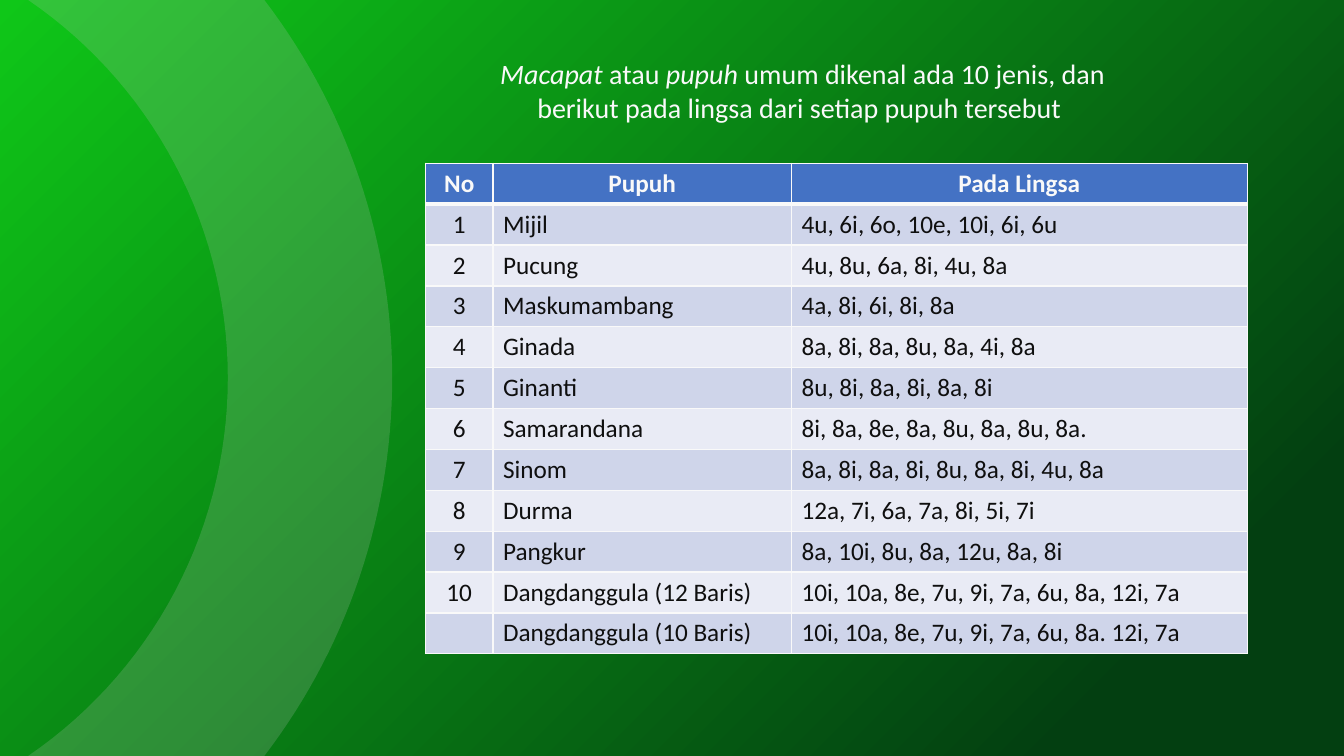
import math

from lxml import etree
from pptx import Presentation
from pptx.dml.color import RGBColor
from pptx.enum.shapes import MSO_SHAPE
from pptx.enum.text import MSO_ANCHOR, MSO_AUTO_SIZE, PP_ALIGN
from pptx.oxml.ns import qn
from pptx.util import Inches, Pt

RECTANGLE = MSO_SHAPE.RECTANGLE
TOP = MSO_ANCHOR.TOP
NO_AUTOFIT = MSO_AUTO_SIZE.NONE
CENTER = PP_ALIGN.CENTER
LEFT = PP_ALIGN.LEFT
TITLE_ONLY = 5

COLORS = {
    "bright": "0FC718",
    "deep": "033F11",
    "ring": "C3C3C3",
    "light": "F9F9F9",
    "dark": "0F0F0F",
    "header": "4472C4",
    "odd": "CFD5EA",
    "even": "E9EBF5",
}
TITLE_FONT = {"name": "Calibri", "size": Pt(20), "bold": False}
HEADER_FONT = {"name": "Calibri", "size": Pt(18), "bold": True}
BODY_FONT = {"name": "Calibri", "size": Pt(18), "bold": False}

TITLE_RUNS = [
    ("Macapat ", True),
    ("atau ", False),
    ("pupuh ", True),
    ("umum dikenal ada 10 jenis, dan berikut pada lingsa dari setiap pupuh tersebut ", False),
]
COLUMN_WIDTHS = [0.67, 2.96, 4.52]
PUPUH_ROWS = [
    ("No", "Pupuh", "Pada Lingsa"),
    ("1", "Mijil", "4u, 6i, 6o, 10e, 10i, 6i, 6u"),
    ("2", "Pucung", "4u, 8u, 6a, 8i, 4u, 8a"),
    ("3", "Maskumambang", "4a, 8i, 6i, 8i, 8a"),
    ("4", "Ginada", "8a, 8i, 8a, 8u, 8a, 4i, 8a"),
    ("5", "Ginanti", "8u, 8i, 8a, 8i, 8a, 8i"),
    ("6", "Samarandana", "8i, 8a, 8e, 8a, 8u, 8a, 8u, 8a."),
    ("7", "Sinom", "8a, 8i, 8a, 8i, 8u, 8a, 8i, 4u, 8a"),
    ("8", "Durma", "12a, 7i, 6a, 7a, 8i, 5i, 7i"),
    ("9", "Pangkur", "8a, 10i, 8u, 8a, 12u, 8a, 8i"),
    ("10", "Dangdanggula (12 Baris)", "10i, 10a, 8e, 7u, 9i, 7a, 6u, 8a, 12i, 7a"),
    ("", "Dangdanggula (10 Baris)", "10i, 10a, 8e, 7u, 9i, 7a, 6u, 8a. 12i, 7a"),
]


def rgb(name):
    return RGBColor.from_string(COLORS[name])


def format_font(font, values, color):
    for attribute, value in values.items():
        setattr(font, attribute, value)
    font.color.rgb = rgb(color)


def add_backdrop(slide, left, top, width, height):
    backdrop = slide.shapes.add_shape(
        RECTANGLE, Inches(left), Inches(top), Inches(width), Inches(height))
    backdrop.shadow.inherit = False
    backdrop.line.fill.background()
    backdrop.fill.gradient()
    backdrop.fill.gradient_angle = 315
    stops = zip(backdrop.fill.gradient_stops, ("bright", "deep"), (0, 0.86))
    for stop, color, position in stops:
        stop.color.rgb = rgb(color)
        stop.position = position


def arc_points(right, top, height, radius, steps=60):
    half_angle = math.asin(height / 2 / radius)
    angles = [half_angle * (2 * step / steps - 1) for step in range(steps + 1)]
    return [(Inches(right - radius + radius * math.cos(angle)),
             Inches(top + height / 2 + radius * math.sin(angle)))
            for angle in angles]


def add_ring(slide, right, top, thickness, height):
    outer = arc_points(right, top, height, 6.18)
    inner = arc_points(right - thickness, top, height, 4.54)
    points = outer + inner[::-1]
    builder = slide.shapes.build_freeform(*points[0])
    builder.add_line_segments(points[1:], close=True)
    ring = builder.convert_to_shape()
    ring.shadow.inherit = False
    ring.line.fill.background()
    ring.fill.solid()
    ring.fill.fore_color.rgb = rgb("ring")
    color = ring._element.spPr.find(qn("a:solidFill"))[0]
    etree.SubElement(color, qn("a:alpha"), val="20000")


def add_title(slide, left, top, width, height):
    title = slide.shapes.title
    title.left, title.top = Inches(left), Inches(top)
    title.width, title.height = Inches(width), Inches(height)
    frame = title.text_frame
    frame.word_wrap = True
    frame.auto_size = NO_AUTOFIT
    frame.vertical_anchor = TOP
    paragraph = frame.paragraphs[0]
    paragraph.alignment = CENTER
    for text, italic in TITLE_RUNS:
        run = paragraph.add_run()
        run.text = text
        format_font(run.font, TITLE_FONT, "light")
        run.font.italic = italic


def set_borders(cell, widths):
    properties = cell._tc.get_or_add_tcPr()
    for side, width in widths.items():
        line = etree.SubElement(properties, qn(f"a:ln{side}"), w=str(Pt(width)))
        fill = etree.SubElement(line, qn("a:solidFill"))
        etree.SubElement(fill, qn("a:srgbClr"), val=COLORS["light"])


def add_pupuh_table(slide, left, top, width, height):
    frame = slide.shapes.add_table(
        len(PUPUH_ROWS), len(COLUMN_WIDTHS),
        Inches(left), Inches(top), Inches(width), Inches(height))
    table = frame.table
    for column, column_width in zip(table.columns, COLUMN_WIDTHS):
        column.width = Inches(column_width)
    for row_index, texts in enumerate(PUPUH_ROWS):
        is_header = row_index == 0
        band = "header" if is_header else ("even", "odd")[row_index % 2]
        widths = {"L": 1, "R": 1, "T": 3 if row_index == 1 else 1,
                  "B": 3 if is_header else 1}
        for column_index, text in enumerate(texts):
            cell = table.cell(row_index, column_index)
            set_borders(cell, widths)
            cell.fill.solid()
            cell.fill.fore_color.rgb = rgb(band)
            if not text:
                continue
            paragraph = cell.text_frame.paragraphs[0]
            paragraph.alignment = CENTER if is_header or column_index == 0 else LEFT
            run = paragraph.add_run()
            run.text = text
            format_font(run.font, HEADER_FONT if is_header else BODY_FONT,
                        "light" if is_header else "dark")


def add_pupuh_slide(presentation, width, height):
    slide = presentation.slides.add_slide(presentation.slide_layouts[TITLE_ONLY])
    slide.background.fill.solid()
    slide.background.fill.fore_color.rgb = rgb("dark")
    add_backdrop(slide, 0, 0, width, height)
    add_ring(slide, 3.89, 0, 1.63, height)
    title_element = slide.shapes.title._element
    title_element.getparent().append(title_element)
    add_title(slide, 4.76, 0.51, 6.4, 0.77)
    add_pupuh_table(slide, 4.22, 1.62, sum(COLUMN_WIDTHS), 4.87)


def main():
    width, height = 13.33, 7.5
    presentation = Presentation()
    presentation.slide_width = Inches(width)
    presentation.slide_height = Inches(height)
    add_pupuh_slide(presentation, width, height)
    presentation.save("out.pptx")


if __name__ == "__main__":
    main()
